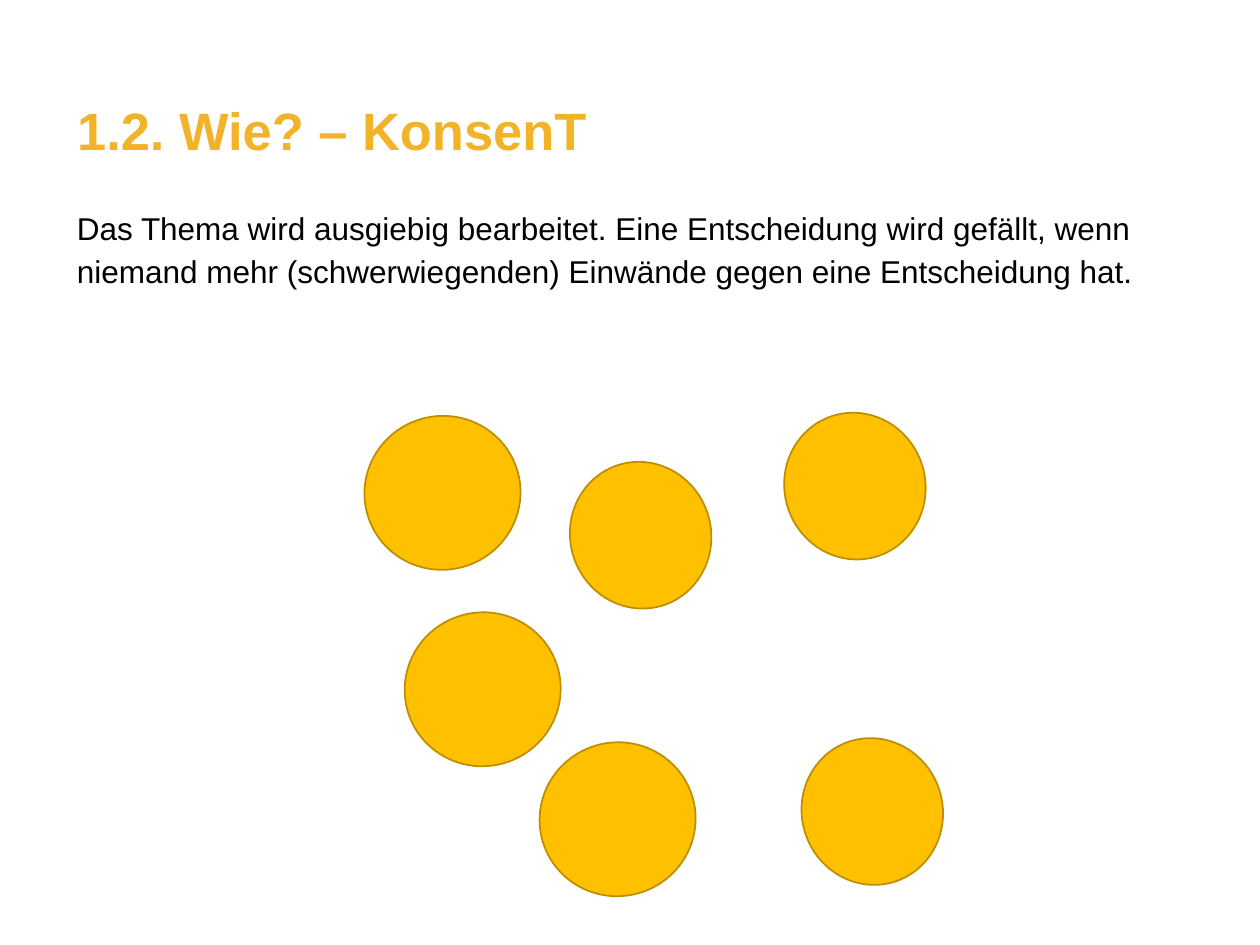
from pptx import Presentation
from pptx.dml.color import RGBColor
from pptx.enum.shapes import MSO_SHAPE
from pptx.enum.text import MSO_ANCHOR, MSO_AUTO_SIZE, PP_ALIGN
from pptx.util import Cm, Pt

OVAL = MSO_SHAPE.OVAL
TOP = MSO_ANCHOR.TOP
LEFT = PP_ALIGN.LEFT
NO_AUTOFIT = MSO_AUTO_SIZE.NONE
TITLE_ONLY = 5

FONT = "Arial"
TITLE_COLOR, TEXT_COLOR = "F3B329", "000000"
CIRCLE_FILL, CIRCLE_LINE = "FFC000", "BD8E00"

# Boxes: left, top, width, height in cm
TITLE_BOX = (1.3, 2, 23.01, 2)
EXPLANATION_BOX = (1.3, 4, 23.01, 14.22)
CIRCLES_BOX = (7.37, 8.36, 11.7, 9.73)

TITLE = "1.2. Wie? – KonsenT"
EXPLANATION = (
    "Das Thema wird ausgiebig bearbeitet. Eine Entscheidung wird gefällt, wenn "
    "niemand mehr (schwerwiegenden) Einwände gegen eine Entscheidung hat."
)

# Each kind of circle: width, height, rotation, offsets inside the circles box
CIRCLES = (
    (2.97, 2.84, 71.9, ((8.38, 0.02), (4.06, 1.01), (8.73, 6.58))),
    (3.1, 3.15, 254.2, ((0.81, 3.96), (3.53, 6.58), (0, 0))),
)


def color(hex_string):
    return RGBColor.from_string(hex_string)


def write_text(frame, text, size, hex_color, line_spacing, bold=False):
    frame.text = text
    frame.word_wrap = True
    frame.auto_size = NO_AUTOFIT
    frame.vertical_anchor = TOP
    paragraph = frame.paragraphs[0]
    paragraph.alignment = LEFT
    paragraph.line_spacing = line_spacing
    paragraph.space_before = Pt(0)
    font = paragraph.runs[0].font
    font.name, font.size, font.bold = FONT, Pt(size), bold
    font.color.rgb = color(hex_color)


def place_title(slide, box):
    title = slide.shapes.title
    title.left, title.top, title.width, title.height = map(Cm, box)
    write_text(title.text_frame, TITLE, 30, TITLE_COLOR, 0.9, bold=True)


def place_explanation(slide, box):
    explanation = slide.shapes.add_textbox(*map(Cm, box))
    write_text(explanation.text_frame, EXPLANATION, 18, TEXT_COLOR, Pt(24.4))


def place_circles(slide, box):
    left, top = box[:2]
    for width, height, rotation, offsets in CIRCLES:
        for x, y in offsets:
            circle = slide.shapes.add_shape(
                OVAL, Cm(left + x), Cm(top + y), Cm(width), Cm(height))
            circle.rotation = rotation
            circle.shadow.inherit = False
            circle.fill.solid()
            circle.fill.fore_color.rgb = color(CIRCLE_FILL)
            circle.line.color.rgb = color(CIRCLE_LINE)
            circle.line.width = Pt(1)


def main():
    presentation = Presentation()
    presentation.slide_width, presentation.slide_height = Cm(25.4), Cm(19.05)
    slide = presentation.slides.add_slide(presentation.slide_layouts[TITLE_ONLY])
    place_title(slide, TITLE_BOX)
    place_explanation(slide, EXPLANATION_BOX)
    place_circles(slide, CIRCLES_BOX)
    presentation.save("out.pptx")


if __name__ == "__main__":
    main()
